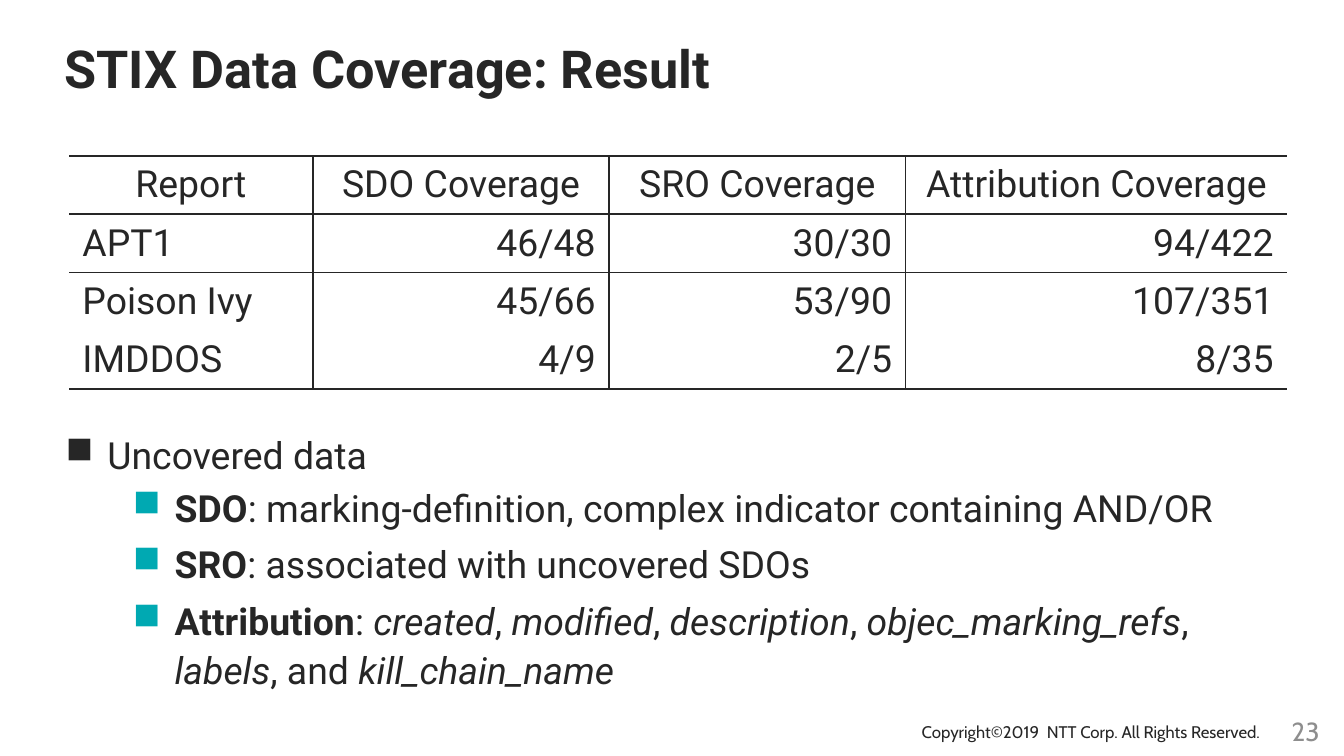
from lxml.etree import SubElement
from pptx import Presentation
from pptx.dml.color import RGBColor
from pptx.enum.text import MSO_ANCHOR as ANCHOR, PP_ALIGN as ALIGN
from pptx.oxml.ns import qn
from pptx.util import Pt

INK = RGBColor(0x26, 0x26, 0x26)
GRAY = RGBColor(0x8E, 0x8E, 0x8E)
TEAL = RGBColor(0x00, 0xA9, 0xB2)


def add_text(p, text, size=20, font="Roboto", color=INK, bold=False, italic=False, align=ALIGN.LEFT):
    p.alignment = align
    r = p.add_run()
    r.text = text
    f = r.font
    f.size, f.name, f.bold, f.italic = Pt(size), font, bold, italic
    f.color.rgb = color


def set_border(cell, side, color=None):
    """Draw one side (L, R, T or B) of a cell, or clear it when no color is given."""
    ln = SubElement(cell._tc.get_or_add_tcPr(), qn(f"a:ln{side}"), w=str(Pt(1)))
    if color is None:
        SubElement(ln, qn("a:noFill"))
    else:
        fill = SubElement(ln, qn("a:solidFill"))
        SubElement(fill, qn("a:srgbClr"), val=str(color))


prs = Presentation()
prs.slide_width, prs.slide_height = Pt(720), Pt(405)
s = prs.slides.add_slide(prs.slide_layouts[6])

# Title, copyright line and page number
labels = [
    ((27.4, 15.8, 546.5, 37.4), ANCHOR.TOP, True, "STIX Data Coverage: Result", dict(size=28, bold=True)),
    ((486.7, 383, 197.3, 18), ANCHOR.TOP, False, "Copyright©2019  NTT Corp. All Rights Reserved.",
     dict(size=9, font="Cabin")),
    ((681.1, 377.3, 36.7, 28.8), ANCHOR.MIDDLE, True, "23",
     dict(size=14, font="Cabin", color=GRAY, align=ALIGN.CENTER)),
]
for box, anchor, wrap, text, style in labels:
    tf = s.shapes.add_textbox(*map(Pt, box)).text_frame
    tf.word_wrap, tf.vertical_anchor = wrap, anchor
    add_text(tf.paragraphs[0], text, **style)

# Coverage table
rows = [
    ("Report", "SDO Coverage", "SRO Coverage", "Attribution Coverage"),
    ("APT1", "46/48", "30/30", "94/422"),
    ("Poison Ivy", "45/66", "53/90", "107/351"),
    ("IMDDOS", "4/9", "2/5", "8/35"),
]
col_widths = [130.6, 158.8, 158.8, 204.4]
row_height = 30.8
ruled_below = {0, 1, 3}

table = s.shapes.add_table(len(rows), len(col_widths), Pt(37), Pt(83.5),
                           Pt(sum(col_widths)), Pt(row_height * len(rows))).table
table.first_row = table.horz_banding = False
for col, width in zip(table.columns, col_widths):
    col.width = Pt(width)
for i, values in enumerate(rows):
    table.rows[i].height = Pt(row_height)
    for j, value in enumerate(values):
        cell = table.cell(i, j)
        cell.vertical_anchor = ANCHOR.MIDDLE
        ruled = {
            "L": j > 0,
            "R": j < len(values) - 1,
            "T": i == 0 or i - 1 in ruled_below,
            "B": i in ruled_below,
        }
        for side, shown in ruled.items():
            set_border(cell, side, INK if shown else None)
        cell.fill.background()
        align = ALIGN.CENTER if i == 0 else ALIGN.RIGHT if j else ALIGN.LEFT
        add_text(cell.text_frame.paragraphs[0], value, align=align)

# Bullets: level and runs, with "b" for bold and "i" for italic
bullets = [
    (0, [("Uncovered data", "")]),
    (1, [("SDO", "b"), (": marking-definition, complex indicator containing AND/OR", "")]),
    (1, [("SRO", "b"), (": associated with uncovered SDOs", "")]),
    (1, [("Attribution", "b"), (": ", ""), ("created", "i"), (", ", ""), ("modified", "i"),
         (", ", ""), ("description", "i"), (", ", ""), ("objec_marking_refs", "i"), (", ", ""),
         ("labels", "i"), (", and ", ""), ("kill_chain_name", "i")]),
]
tf = s.shapes.add_textbox(Pt(28.1), Pt(225.4), Pt(665.3), Pt(142.6)).text_frame
tf.word_wrap = True
for n, (level, runs) in enumerate(bullets):
    p = tf.add_paragraph() if n else tf.paragraphs[0]
    p.level = level
    p.line_spacing = 1.1
    if level:
        p.space_before = p.space_after = Pt(2)
    pPr = p._p.get_or_add_pPr()
    pPr.set("marL", str(Pt(22.4 + 36 * level)))
    pPr.set("indent", str(Pt(-22.4)))
    bullet_color = SubElement(pPr, qn("a:buClr"))
    SubElement(bullet_color, qn("a:srgbClr"), val=str(TEAL if level else INK))
    SubElement(pPr, qn("a:buChar"), char="■")
    for text, style in runs:
        add_text(p, text, bold=style == "b", italic=style == "i")

prs.save("out.pptx")
